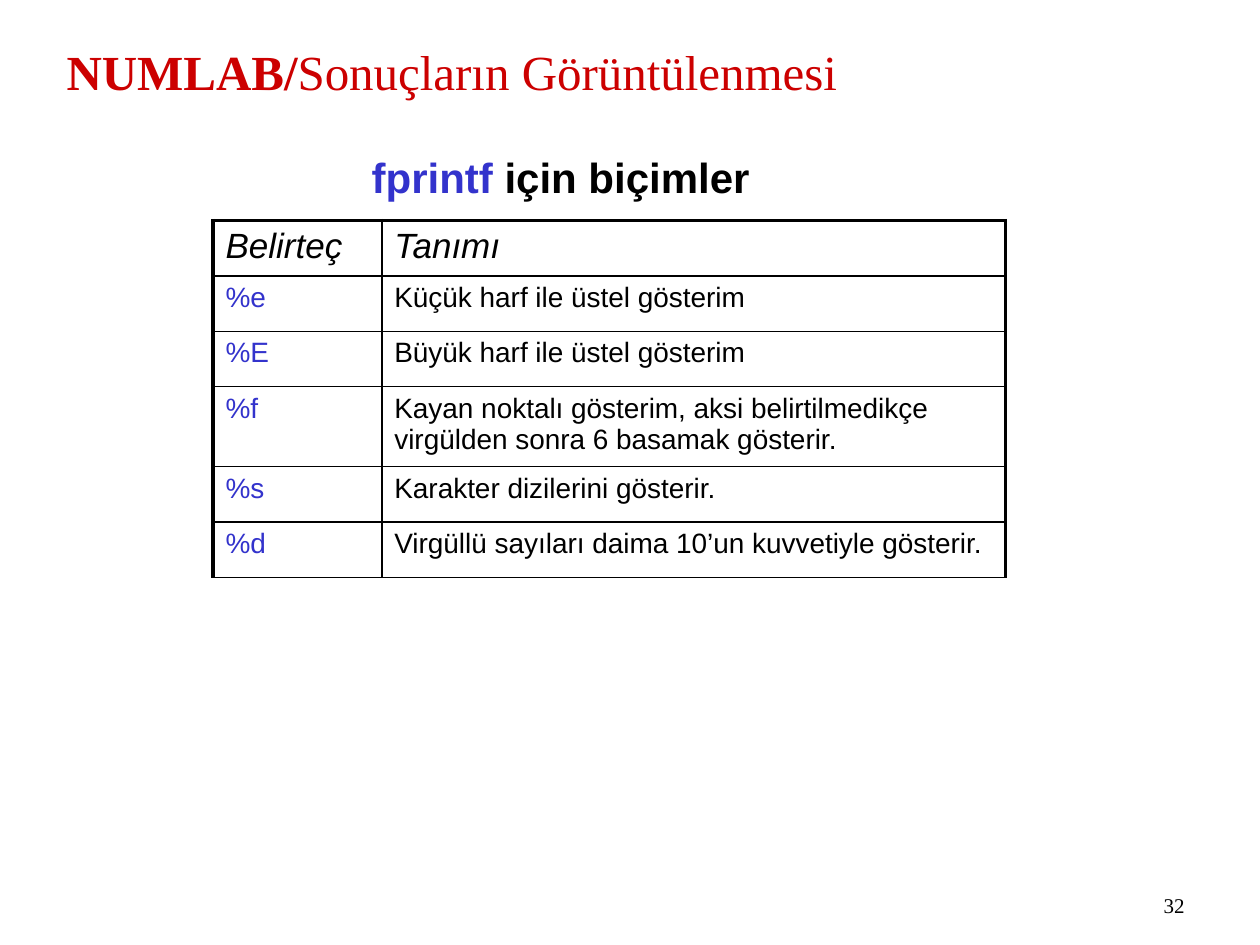
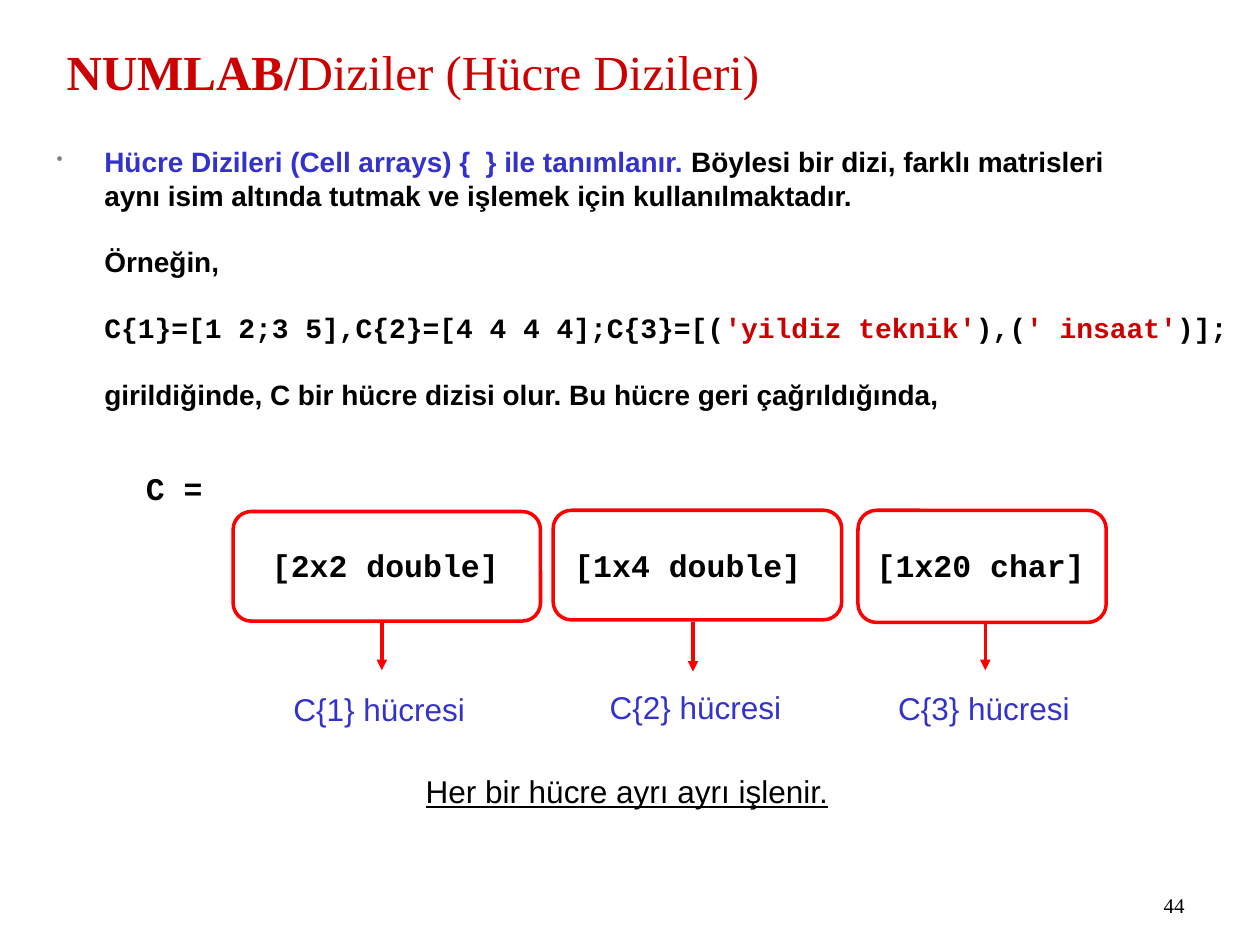
"""Build two lecture slides: fprintf format specifiers and cell arrays."""
from dataclasses import dataclass

from pptx import Presentation
from pptx import util as u
from pptx.dml.color import RGBColor
from pptx.enum import shapes, text
from pptx.oxml import parse_xml
from pptx.oxml.ns import nsdecls, qn


@dataclass(frozen=True)
class Theme:
    """Colours, fonts and type sizes shared by the slides."""
    black: str = "000000"
    blue: str = "3333CC"
    crimson: str = "CC0000"
    red: str = "FF0000"
    grey: str = "808080"
    serif: str = "Times New Roman"
    sans: str = "Arial"
    mono: str = "Courier New"
    title: int = 28
    subtitle: int = 24
    header: int = 20
    label: int = 18
    body: int = 16
    number: int = 12
    thin: float = 1
    stroke: float = 2
    thick: float = 2.25


T = Theme()


def add_run(p, content, size, color=T.black, font=T.sans, bold=False, italic=False,
            underline=False):
    """Append one formatted run to a paragraph."""
    r = p.add_run()
    r.text = content
    f = r.font
    f.size, f.name, f.bold, f.italic, f.underline = u.Pt(size), font, bold, italic, underline
    f.color.rgb = RGBColor.from_string(color)


def add_box(s, left, top, width, height, align=text.PP_ALIGN.LEFT, wrap=True,
            anchor=text.MSO_ANCHOR.TOP):
    """Add a text box and return its text frame."""
    tf = s.shapes.add_textbox(*map(u.Inches, (left, top, width, height))).text_frame
    tf.word_wrap = wrap
    tf.vertical_anchor = anchor
    tf.paragraphs[0].alignment = align
    return tf


def add_xml(parent, tag, inner="", **attrs):
    """Append a DrawingML element to a parent element."""
    listed = " ".join(f'{k}="{v}"' for k, v in attrs.items())
    parent.append(parse_xml(f'<a:{tag} {nsdecls("a")} {listed}>{inner}</a:{tag}>'))


def color_xml(color):
    """Return the XML of a plain colour."""
    return f'<a:srgbClr val="{color}"/>'


def add_slide(prs, topic, number):
    """Add a blank slide with the shared title and page number."""
    s = prs.slides.add_slide(prs.slide_layouts[6])
    p = add_box(s, 0.43, 0.28, 9, 0.93).paragraphs[0]
    add_run(p, "NUMLAB/", T.title, T.crimson, T.serif, bold=True)
    add_run(p, topic, T.title, T.crimson, T.serif)
    tf = add_box(s, 7.17, 6.83, 2.33, 0.5, text.PP_ALIGN.RIGHT,
                 anchor=text.MSO_ANCHOR.BOTTOM)
    add_run(tf.paragraphs[0], str(number), T.number, font=T.serif)
    return s


def add_borders(cell, **widths):
    """Draw the L, R, T and B borders of a cell in the given order."""
    for side, width in widths.items():
        add_xml(cell._tc.get_or_add_tcPr(), f"ln{side}",
                f"<a:solidFill>{color_xml(T.black)}</a:solidFill>", w=u.Pt(width))


def add_format_table(s, rows):
    """Add the table of specifiers, header row first."""
    widths, row_height = (1.34, 4.95), 0.44
    table = s.shapes.add_table(len(rows), len(widths), u.Inches(1.69), u.Inches(1.75),
                               u.Inches(sum(widths)), u.Inches(row_height * len(rows))).table
    table.first_row = table.horz_banding = False
    for column, width in zip(table.columns, widths):
        column.width = u.Inches(width)
    for i, row in enumerate(rows):
        table.rows[i].height = u.Inches(row_height)
        for j, content in enumerate(row):
            cell = table.cell(i, j)
            add_borders(cell, L=T.thin if j else T.thick, R=T.thick if j else T.thin,
                        T=T.thin if i else T.thick, B=T.thin)
            cell.fill.background()
            add_run(cell.text_frame.paragraphs[0], content, T.body if i else T.header,
                    T.blue if i and not j else T.black, italic=i == 0)


def add_explanation(s, lines):
    """Add the bulleted explanation from (space before, runs) lines."""
    tf = add_box(s, 0.35, 1.15, 9.65, 2.6)
    for i, (space, runs) in enumerate(lines):
        p = tf.add_paragraph() if i else tf.paragraphs[0]
        pPr = p._p.get_or_add_pPr()
        pPr.set("marL", str(u.Inches(0.38)))
        if i == 0:
            pPr.set("indent", str(u.Inches(-0.38)))
            add_xml(pPr, "buClr", color_xml(T.grey))
            add_xml(pPr, "buSzPct", val=65000)
            add_xml(pPr, "buChar", char="•")
        p.line_spacing = 0.8
        p.space_before = u.Pt(space)
        for content, color, font in runs:
            add_run(p, content, T.body, color, font, bold=True)


def add_output(s, name, values):
    """Add the displayed variable with its values on tab stops."""
    tf = add_box(s, 1.06, 3.67, 8.11, 1)
    add_run(tf.paragraphs[0], name, T.label, font=T.mono, bold=True)
    p = tf.add_paragraph()
    stops = "".join(f'<a:tab pos="{u.Inches(1 + 2.4 * i)}" algn="l"/>'
                    for i in range(len(values)))
    add_xml(p._p.get_or_add_pPr(), "tabLst", stops)
    p.space_before = u.Pt(22.4)
    for value in values:
        add_run(p, "\t" + value, T.label, font=T.mono, bold=True)


def add_frame(s, left, top, width, height):
    """Add an unfilled rounded frame."""
    sp = s.shapes.add_shape(shapes.MSO_SHAPE.ROUNDED_RECTANGLE,
                            *map(u.Inches, (left, top, width, height)))
    sp.shadow.inherit = False
    sp.fill.background()
    sp.line.color.rgb = RGBColor.from_string(T.red)
    sp.line.width = u.Pt(T.stroke)


def add_down_arrow(s, x, top, length):
    """Add a vertical arrow pointing down."""
    c = s.shapes.add_connector(shapes.MSO_CONNECTOR.STRAIGHT,
                               *map(u.Inches, (x, top, x, top + length)))
    c.line.color.rgb = RGBColor.from_string(T.red)
    c.line.width = u.Pt(T.stroke)
    add_xml(c.line._get_or_add_ln(), "tailEnd", type="triangle")
    add_xml(c._element.find(qn("p:spPr")), "effectLst")


def add_label(s, content, left, top, width, color=T.black, underline=False):
    """Add a centred one-line label."""
    tf = add_box(s, left, top, width, 0.4, text.PP_ALIGN.CENTER, wrap=False)
    add_run(tf.paragraphs[0], content, T.label, color, underline=underline)


def build_formats(prs):
    """Build the slide on fprintf formats."""
    s = add_slide(prs, "Sonuçların Görüntülenmesi", 32)
    add_format_table(s, [
        ("Belirteç", "Tanımı"),
        ("%e", "Küçük harf ile üstel gösterim"),
        ("%E", "Büyük harf ile üstel gösterim"),
        ("%f", "Kayan noktalı gösterim, aksi belirtilmedikçe virgülden sonra "
               "6 basamak gösterir."),
        ("%s", "Karakter dizilerini gösterir."),
        ("%d", "Virgüllü sayıları daima 10’un kuvvetiyle gösterir."),
    ])
    p = add_box(s, 2.72, 1.15, 3.46, 0.5, text.PP_ALIGN.CENTER).paragraphs[0]
    add_run(p, "fprintf", T.subtitle, T.blue, bold=True)
    add_run(p, " için biçimler", T.subtitle, bold=True)


def build_cell_arrays(prs):
    """Build the slide on cell arrays."""
    s = add_slide(prs, "Diziler (Hücre Dizileri)", 44)
    near, far = 4, 22.5
    add_explanation(s, [
        (0, [("Hücre Dizileri (Cell arrays) {  } ile tanımlanır.", T.blue, T.sans),
             (" Böylesi bir dizi, farklı matrisleri", T.black, T.sans)]),
        (near, [("aynı isim altında tutmak ve işlemek için kullanılmaktadır.",
                 T.black, T.sans)]),
        (far, [("Örneğin,", T.black, T.sans)]),
        (far, [("C{1}=[1 2;3 5],C{2}=[4 4 4 4];C{3}=[(", T.black, T.mono),
               ("'yildiz teknik'", T.crimson, T.mono),
               ("),(", T.black, T.mono),
               ("' insaat'", T.crimson, T.mono),
               (")];", T.black, T.mono)]),
        (far, [("girildiğinde, C bir hücre dizisi olur. Bu hücre geri çağrıldığında,",
                T.black, T.sans)]),
    ])
    add_output(s, "C =", ["[2x2 double]", "[1x4 double]", "[1x20 char]"])
    cells = [
        ((1.85, 4.06, 2.44, 0.87), (3.03, 4.93), (2.23, 5.43)),
        ((4.39, 4.05, 2.29, 0.87), (5.5, 4.94), (4.74, 5.41)),
        ((6.81, 4.05, 1.97, 0.89), (7.82, 4.93), (7.03, 5.42)),
    ]
    for i, (frame, arrow, label) in enumerate(cells, 1):
        add_frame(s, *frame)
        add_down_arrow(s, *arrow, 0.39)
        add_label(s, f"C{{{i}}} hücresi", *label, 1.56, T.blue)
    add_label(s, "Her bir hücre ayrı ayrı işlenir.", 3.27, 6.08, 3.41, underline=True)


def main():
    """Build and save the presentation."""
    prs = Presentation()
    prs.slide_width, prs.slide_height = u.Inches(10), u.Inches(7.5)
    build_formats(prs)
    build_cell_arrays(prs)
    prs.save("out.pptx")


if __name__ == "__main__":
    main()
